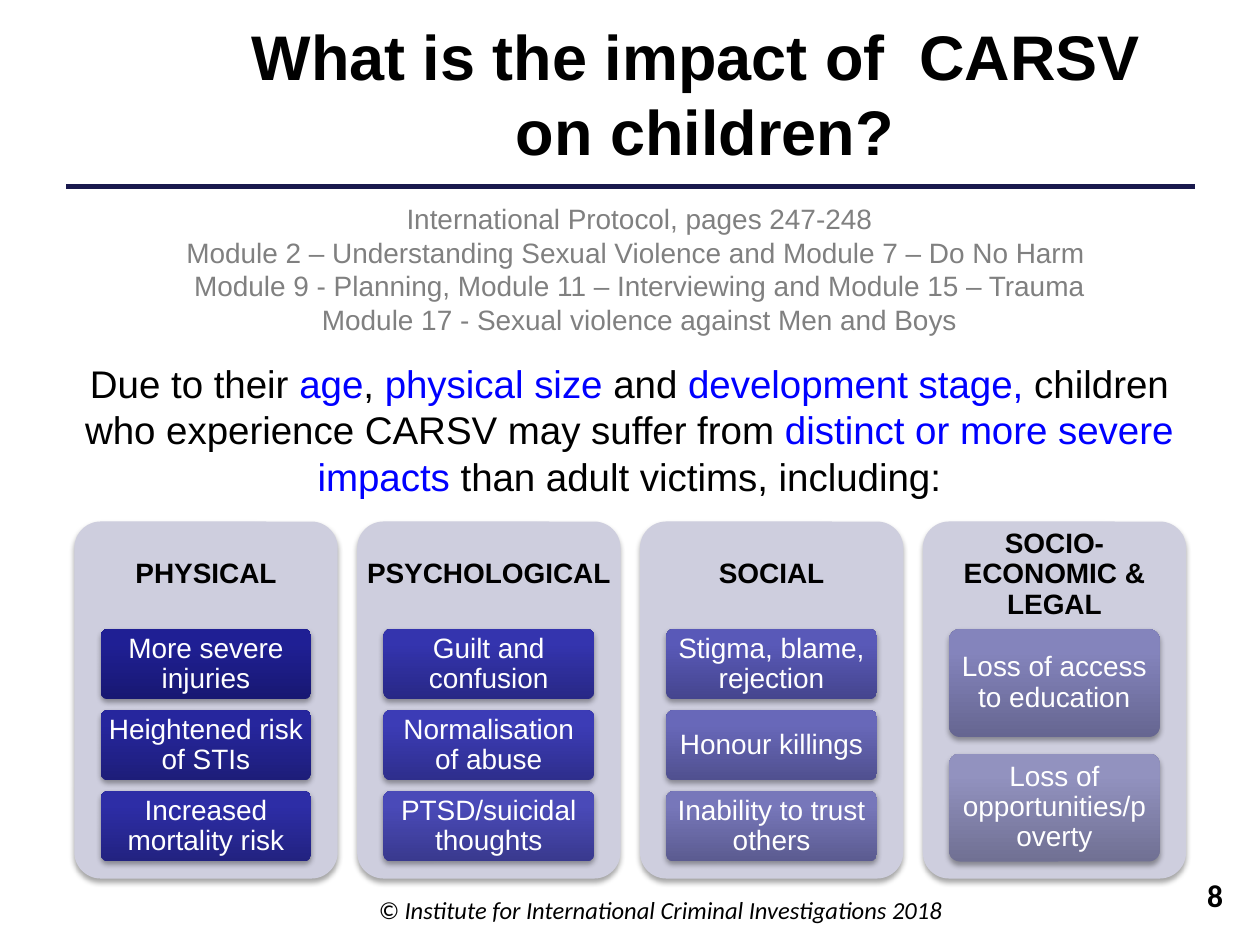
from dataclasses import dataclass

from lxml import etree
from pptx import Presentation
from pptx.dml.color import RGBColor
from pptx.enum import shapes, text
from pptx.oxml.ns import qn
from pptx.util import Pt

TITLE = "What is the impact of  CARSV \von children?"
REFERENCES = [
    "International Protocol, pages 247-248",
    "Module 2 – Understanding Sexual Violence and Module 7 – Do No Harm ",
    "Module 9 - Planning, Module 11 – Interviewing and Module 15 – Trauma",
    "Module 17 - Sexual violence against Men and Boys",
]
# Odd entries are highlighted
STATEMENT = [
    "Due to their ", "age", ", ", "physical size", " and ",
    "development stage, ",
    "children who experience CARSV may suffer from ",
    "distinct or more severe impacts ", "than adult victims, including:",
]
IMPACTS = [
    ("PHYSICAL", ["More severe injuries", "Heightened risk of STIs",
                  "Increased mortality risk"]),
    ("PSYCHOLOGICAL", ["Guilt and confusion", "Normalisation of abuse",
                       "PTSD/suicidal thoughts"]),
    ("SOCIAL", ["Stigma, blame, rejection", "Honour killings",
                "Inability to trust others"]),
    ("SOCIO-ECONOMIC & LEGAL", ["Loss of access to education",
                                "Loss of opportunities/poverty"]),
]
COPYRIGHT = "© Institute for International Criminal Investigations 2018"
PAGE = "8"


@dataclass(frozen=True)
class Theme:
    font: str = "Arial"
    footer_font: str = "Calibri"
    title: int = 36
    statement: int = 22
    page: int = 18
    small: int = 16
    footer: int = 14
    ink: str = "000000"
    muted: str = "808080"
    highlight: str = "0000FF"
    rule: str = "19194D"
    panel: str = "CECEDE"
    on_card: str = "FFFFFF"
    # (bottom, top) of each card in reading order
    cards: tuple = (
        ("181872", "1F1F94"), ("1D1D79", "26269D"), ("222280", "2D2DA6"),
        ("282886", "3434AE"), ("2E2E8C", "3C3CB6"), ("39398E", "4A4AB8"),
        ("45458E", "5959B8"), ("50508F", "6868B9"), ("5B5B90", "7777BA"),
        ("666691", "8484BC"), ("707093", "9292BF"),
    )


T = Theme()
PANEL_LEFT, PANEL_TOP, PANEL_W, PANEL_H = 42.5, 298, 150.5, 204
PANEL_PITCH, HEADER_H = 161.6, 61
CARD_INDENT, CARD_W, CARDS_H = 15, 120.4, 132.8
CARD_GAP = 2 / 13  # share of a card's height


def rgb(value):
    return RGBColor.from_string(value)


def style(p, size, color=T.ink, font=T.font, bold=False, italic=False,
          align=text.PP_ALIGN.CENTER):
    p.alignment = align
    f = p.font
    f.name, f.size, f.bold, f.italic = font, Pt(size), bold, italic
    f.color.rgb = rgb(color)


def add_text(slide, box, lines, size, **look):
    tf = slide.shapes.add_textbox(*map(Pt, box)).text_frame
    tf.word_wrap = True
    for i, line in enumerate(lines):
        p = tf.add_paragraph() if i else tf.paragraphs[0]
        p.text = line
        style(p, size, **look)
    return tf


def add_effects(sp, shadow=True):
    effects = etree.SubElement(sp._element.spPr, qn("a:effectLst"))
    if shadow:
        outer = etree.SubElement(
            effects, qn("a:outerShdw"), blurRad=str(Pt(3.1)),
            dist=str(Pt(1.8)), dir="5400000", rotWithShape="0")
        color = etree.SubElement(outer, qn("a:srgbClr"), val=T.ink)
        etree.SubElement(color, qn("a:alpha"), val="35000")


def add_block(slide, box, label, margins, **look):
    """Add a rounded, shadowed block with a centred label."""
    sp = slide.shapes.add_shape(shapes.MSO_SHAPE.ROUNDED_RECTANGLE,
                                *map(Pt, box))
    sp.adjustments[0] = 0.1
    sp.line.fill.background()
    add_effects(sp)
    tf = sp.text_frame
    tf.word_wrap = True
    tf.vertical_anchor = text.MSO_ANCHOR.MIDDLE
    (tf.margin_left, tf.margin_top,
     tf.margin_right, tf.margin_bottom) = map(Pt, margins)
    p = tf.paragraphs[0]
    p.text = label
    p.line_spacing = 0.9
    style(p, T.small, **look)
    return sp


def add_impacts(slide):
    card_colors = iter(T.cards)
    for col, (heading, items) in enumerate(IMPACTS):
        left = PANEL_LEFT + col * PANEL_PITCH
        panel = add_block(slide, (left, PANEL_TOP, PANEL_W, PANEL_H), heading,
                          (0, 0, 0, PANEL_H - HEADER_H), bold=True)
        panel.fill.solid()
        panel.fill.fore_color.rgb = rgb(T.panel)

        n = len(items)
        height = CARDS_H / (n + (n - 1) * CARD_GAP)
        for row, item in enumerate(items):
            top = PANEL_TOP + HEADER_H + 0.5 + row * height * (1 + CARD_GAP)
            card = add_block(slide, (left + CARD_INDENT, top, CARD_W, height),
                             item, (3, 2, 3, 2), color=T.on_card)
            card.fill.gradient()
            card.fill.gradient_angle = 90
            stops = zip(card.fill.gradient_stops, next(card_colors), (0, 0.8))
            for stop, color, position in stops:
                stop.color.rgb = rgb(color)
                stop.position = position


def main():
    prs = Presentation()
    prs.slide_width, prs.slide_height = Pt(720), Pt(540)
    slide = prs.slides.add_slide(prs.slide_layouts[5])

    title = slide.shapes.title
    title.left, title.top, title.width, title.height = map(
        Pt, (121.7, 4, 562.3, 98))
    tf = title.text_frame
    tf.text = TITLE
    tf.auto_size = text.MSO_AUTO_SIZE.NONE
    tf.vertical_anchor = text.MSO_ANCHOR.MIDDLE
    style(tf.paragraphs[0], T.title, bold=True)

    rule = slide.shapes.add_connector(shapes.MSO_CONNECTOR.STRAIGHT,
                                      *map(Pt, (38, 106.5, 683, 106.5)))
    rule.line.color.rgb = rgb(T.rule)
    rule.line.width = Pt(2.5)
    add_effects(rule, shadow=False)

    add_text(slide, (196, 508, 363, 21), [COPYRIGHT], T.footer,
             font=T.footer_font, italic=True)
    add_text(slide, (666, 497, 40, 32), [PAGE], T.page, font=T.footer_font,
             bold=True, align=text.PP_ALIGN.RIGHT)
    add_text(slide, (36.7, 111.6, 657.4, 106.6), REFERENCES, T.small,
             color=T.muted)

    p = add_text(slide, (25.2, 202.3, 668.9, 113.8), [""],
                 T.statement).paragraphs[0]
    for i, part in enumerate(STATEMENT):
        r = p.add_run()
        r.text = part
        if i % 2:
            r.font.color.rgb = rgb(T.highlight)

    add_impacts(slide)
    prs.save("out.pptx")


if __name__ == "__main__":
    main()
